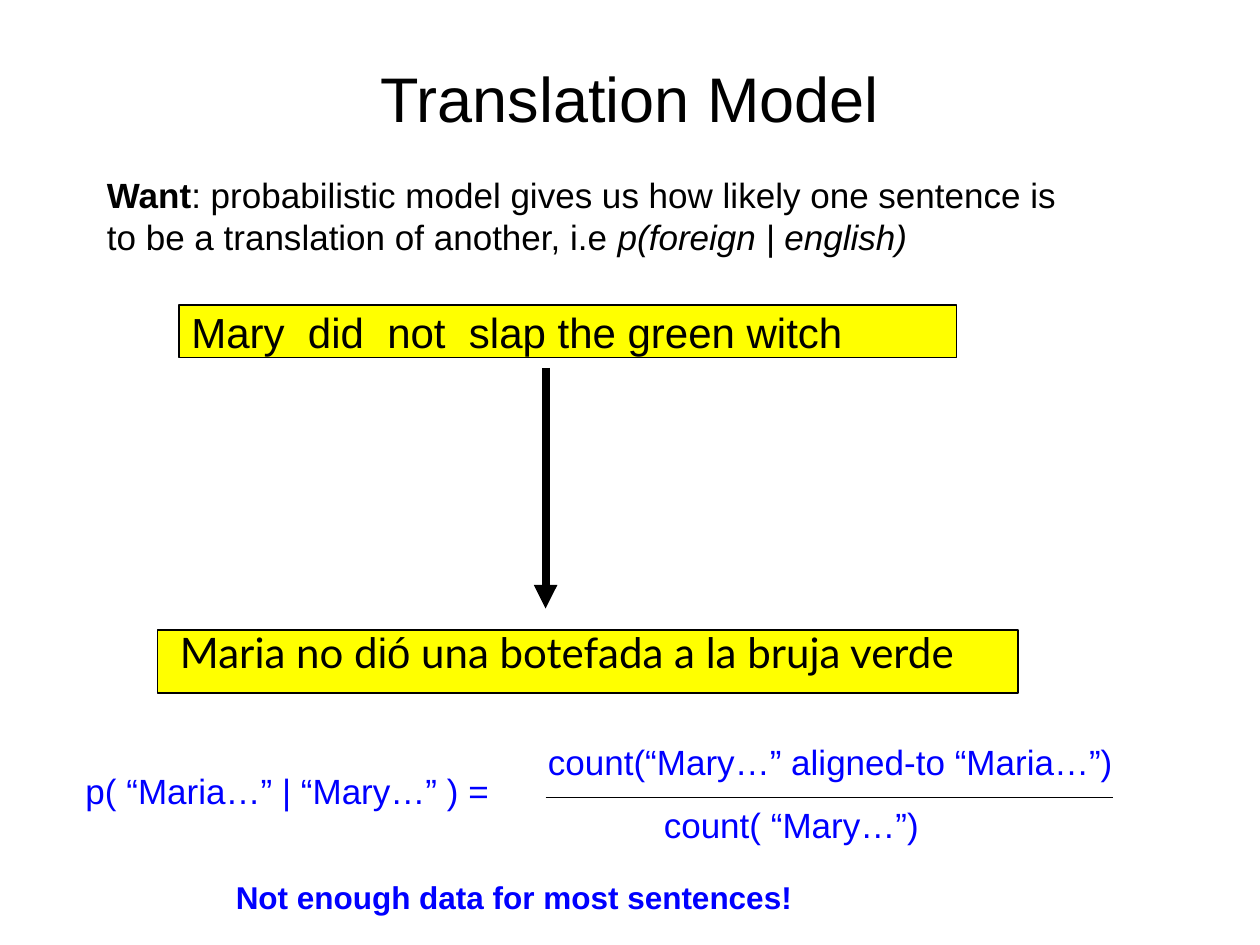
import pptx
import pptx.dml.color
import pptx.enum.shapes
import pptx.enum.text
import pptx.oxml.ns
import pptx.util
from lxml import etree
from pptx.util import Inches

BLACK, BLUE, YELLOW = "000000", "0000FF", "FFFF00"
ALIGN = pptx.enum.text.PP_ALIGN
ANCHOR = pptx.enum.text.MSO_ANCHOR


def color(value):
    return pptx.dml.color.RGBColor.from_string(value)


def write_text(shape, *runs, size=20, font="Arial", fill=BLACK, bold=False,
               align=ALIGN.LEFT, anchor=ANCHOR.TOP, wrap=True):
    """Fill a shape with one paragraph; a run is (text, font overrides)."""
    frame = shape.text_frame
    frame.word_wrap = wrap
    frame.vertical_anchor = anchor
    paragraph = frame.paragraphs[0]
    paragraph.alignment = align
    for text, overrides in runs:
        run = paragraph.add_run()
        run.text = text
        run.font.size = pptx.util.Pt(size)
        run.font.name = overrides.get("font", font)
        run.font.bold = overrides.get("bold", bold)
        run.font.italic = overrides.get("italic", False)
        run.font.color.rgb = color(fill)


def add_text(slide, box, *runs, **text_format):
    shape = slide.shapes.add_textbox(*map(Inches, box))
    write_text(shape, *runs, **text_format)


def add_bar(slide, box):
    shape = slide.shapes.add_shape(
        pptx.enum.shapes.MSO_SHAPE.RECTANGLE, *map(Inches, box))
    shape.shadow.inherit = False
    shape.fill.solid()
    shape.fill.fore_color.rgb = color(YELLOW)
    shape.line.color.rgb = color(BLACK)
    shape.line.width = pptx.util.Pt(0.75)
    return shape


def add_line(slide, start, end, width, arrow=False):
    connector = slide.shapes.add_connector(
        pptx.enum.shapes.MSO_CONNECTOR.STRAIGHT, *map(Inches, start + end))
    connector.line.color.rgb = color(BLACK)
    connector.line.width = pptx.util.Pt(width)
    if arrow:
        etree.SubElement(connector.line._get_or_add_ln(),
                         pptx.oxml.ns.qn("a:tailEnd"), type="triangle")
    etree.SubElement(connector._element.spPr, pptx.oxml.ns.qn("a:effectLst"))


def add_heading(slide, box):
    left, top, width, height = box
    add_text(slide, (left, top, width, 0.95), ("Translation Model", {}),
             size=36, align=ALIGN.CENTER, anchor=ANCHOR.MIDDLE)
    add_text(slide, (left + 0.25, top + 1.03, 7.75, 0.77),
             ("Want", {"bold": True}),
             (": probabilistic model gives us how likely one sentence is "
              "to be a translation of another, i.e ", {}),
             ("p(foreign | english)", {"italic": True}))


def add_sentence_pair(slide, box):
    left, top, width, height = box
    # English sentence
    english = add_bar(slide, (left + 0.17, top, 6.17, 0.42))
    write_text(english, ("Mary  did  not  slap the green witch", {}),
               size=24, anchor=ANCHOR.MIDDLE, wrap=False)
    # Foreign sentence, set slightly above its bar
    bar_top = top + height - 0.5
    add_bar(slide, (left, bar_top, width, 0.5))
    add_text(slide, (left + 0.08, bar_top - 0.08, 6.49, 0.5),
             ("Maria no d", {}), ("ió", {"font": "Arial"}),
             (" una botefada a la bruja verde", {}),
             size=24, font="Lato", wrap=False)
    # Translation arrow
    middle = left + 3.08
    add_line(slide, (middle, top + 0.5), (middle, bar_top - 0.17), 4.5,
             arrow=True)


def add_formula(slide, box):
    left, top, width, height = box
    bar_y = top + 0.5
    add_text(slide, (left, top + 0.23, 3.42, 0.44),
             ("p( “Maria…” | “Mary…” ) =", {}), fill=BLUE)
    # Fraction
    add_text(slide, (left + 3.67, top, 5.25, 0.44),
             ("count(“Mary…” aligned-to “Maria…”)", {}), fill=BLUE)
    add_line(slide, (left + 3.75, bar_y), (left + 8.25, bar_y), 0.75)
    add_text(slide, (left + 4.59, bar_y, 2.33, 0.44),
             ("count( “Mary…”)", {}), fill=BLUE)
    # Remark
    add_text(slide, (left + 1.17, top + height - 0.4, 4.66, 0.4),
             ("Not enough data for most sentences!", {}), size=18, fill=BLUE,
             bold=True, align=ALIGN.CENTER, wrap=False)


def main():
    presentation = pptx.Presentation()
    presentation.slide_width = Inches(10)
    presentation.slide_height = Inches(7.5)
    slide = presentation.slides.add_slide(presentation.slide_layouts[6])
    add_heading(slide, (0.5, 0.3, 9, 1.8))
    add_sentence_pair(slide, (1.25, 2.42, 6.83, 3.08))
    add_formula(slide, (0.58, 5.83, 8.92, 1.49))
    presentation.save("out.pptx")


if __name__ == "__main__":
    main()
